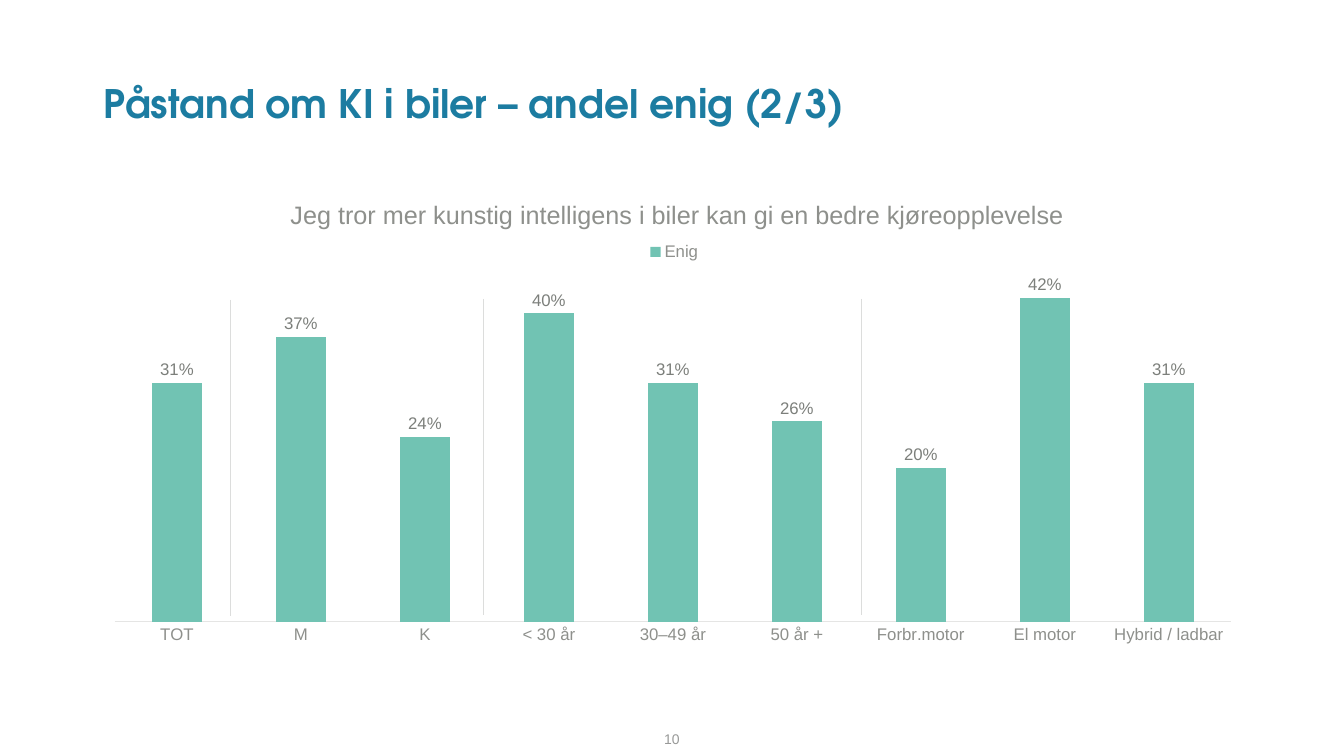
"""Build the slide on the share agreeing that AI improves the driving experience."""
from lxml import etree
from pptx import Presentation
from pptx import util as u
from pptx.chart.data import CategoryChartData
from pptx.dml.color import RGBColor
from pptx.enum import chart as c, shapes, text
from pptx.oxml.ns import qn

PX = 914400 / 100.8
FONT = "Arial"
GREY = "8E908C"
TITLE = "Påstand om KI i biler – andel enig (2/3)"
PAGE_NUMBER = "10"
CHART_TITLE = "Jeg tror mer kunstig intelligens i biler kan gi en bedre kjøreopplevelse"
SERIES_NAME = "Enig"
SHARES = {
    "TOT": 0.31, "M": 0.37, "K": 0.24,
    "< 30 år": 0.40, "30–49 år": 0.31, "50 år +": 0.26,
    "Forbr.motor": 0.20, "El motor": 0.42, "Hybrid / ladbar": 0.31,
}
CHART_BOX = (93, 171, 1161, 482)
PLOT_BOX = (115, 275, 1116, 347)
DIVIDERS = [(230, 300, 616), (483, 299, 615), (861, 299, 615)]


def px(*lengths):
    return [u.Emu(round(length * PX)) for length in lengths]


def color(value):
    return RGBColor.from_string(value)


def style(font, size, value, name=FONT, bold=False):
    font.size, font.name, font.bold = u.Pt(size), name, bold
    font.color.rgb = color(value)


def add_text(slide, box, content, anchor, align, *look):
    frame = slide.shapes.add_textbox(*px(*box)).text_frame
    frame.word_wrap = True
    frame.vertical_anchor = anchor
    paragraph = frame.paragraphs[0]
    paragraph.alignment = align
    run = paragraph.add_run()
    run.text = content
    style(run.font, *look)
    return paragraph


def place(element, index, left, top, width=None, height=None):
    for old in element.findall(qn("c:layout")):
        element.remove(old)
    layout = etree.Element(qn("c:layout"))
    manual = etree.SubElement(layout, qn("c:manualLayout"))
    chart_left, chart_top, chart_width, chart_height = CHART_BOX
    settings = {"xMode": "edge", "yMode": "edge",
                "x": (left - chart_left) / chart_width,
                "y": (top - chart_top) / chart_height}
    if width:
        settings = {"layoutTarget": "inner", **settings,
                    "w": width / chart_width, "h": height / chart_height}
    for tag, value in settings.items():
        etree.SubElement(manual, qn("c:" + tag)).set("val", str(value))
    element.insert(index, layout)


def add_share_chart(slide):
    data = CategoryChartData(number_format="0%")
    data.categories = list(SHARES)
    data.add_series(SERIES_NAME, list(SHARES.values()))
    chart = slide.shapes.add_chart(
        c.XL_CHART_TYPE.COLUMN_CLUSTERED, *px(*CHART_BOX), data).chart
    style(chart.font, 10, "515350")

    chart.has_title = True
    run = chart.chart_title.text_frame.paragraphs[0].add_run()
    run.text = CHART_TITLE
    style(run.font, 18, GREY)
    chart.has_legend = True
    chart.legend.position = c.XL_LEGEND_POSITION.TOP
    chart.legend.include_in_layout = False
    style(chart.legend.font, 12, GREY)

    categories = chart.category_axis
    categories.major_tick_mark = c.XL_TICK_MARK.NONE
    categories.format.line.color.rgb = color("E5E5E4")
    categories.format.line.width = u.Pt(0.75)
    style(categories.tick_labels.font, 12, GREY)
    values = chart.value_axis
    values.minimum_scale, values.maximum_scale = 0, 0.45
    values.has_major_gridlines = False
    values.visible = False

    plot = chart.plots[0]
    plot.gap_width, plot.overlap = 150, -25
    plot.vary_by_categories = False
    series = plot.series[0]
    series.format.fill.solid()
    series.format.fill.fore_color.rgb = color("71C3B3")
    labels = series.data_labels
    labels.show_value = True
    labels.number_format, labels.number_format_is_linked = "0%", False
    labels.position = c.XL_LABEL_POSITION.OUTSIDE_END
    style(labels.font, 12, "7C7F7B")

    root = chart.element.find(qn("c:chart"))
    place(root.find(qn("c:title")), 1, 286, 194)
    place(root.find(qn("c:legend")), 1, 645, 239)
    place(root.find(qn("c:plotArea")), 0, *PLOT_BOX)


def add_divider(slide, x, top, bottom):
    line = slide.shapes.add_connector(
        shapes.MSO_CONNECTOR.STRAIGHT, *px(x, top, x, bottom))
    line.line.color.rgb = color("DCDDDC")
    line.line.width = u.Pt(0.5)
    etree.SubElement(line.element.spPr, qn("a:effectLst"))


def main():
    presentation = Presentation()
    presentation.slide_width, presentation.slide_height = px(1344, 756)
    slide = presentation.slides.add_slide(presentation.slide_layouts[6])
    heading = add_text(slide, (94, 39, 1161, 93), TITLE, text.MSO_ANCHOR.BOTTOM,
                       text.PP_ALIGN.LEFT, 28, "1C7CA1", "TeX Gyre Adventor", True)
    heading.line_spacing = 0.9
    add_text(slide, (634, 721, 76, 35), PAGE_NUMBER, text.MSO_ANCHOR.MIDDLE,
             text.PP_ALIGN.CENTER, 10, "989998")
    add_share_chart(slide)
    for divider in DIVIDERS:
        add_divider(slide, *divider)
    presentation.save("out.pptx")


if __name__ == "__main__":
    main()
